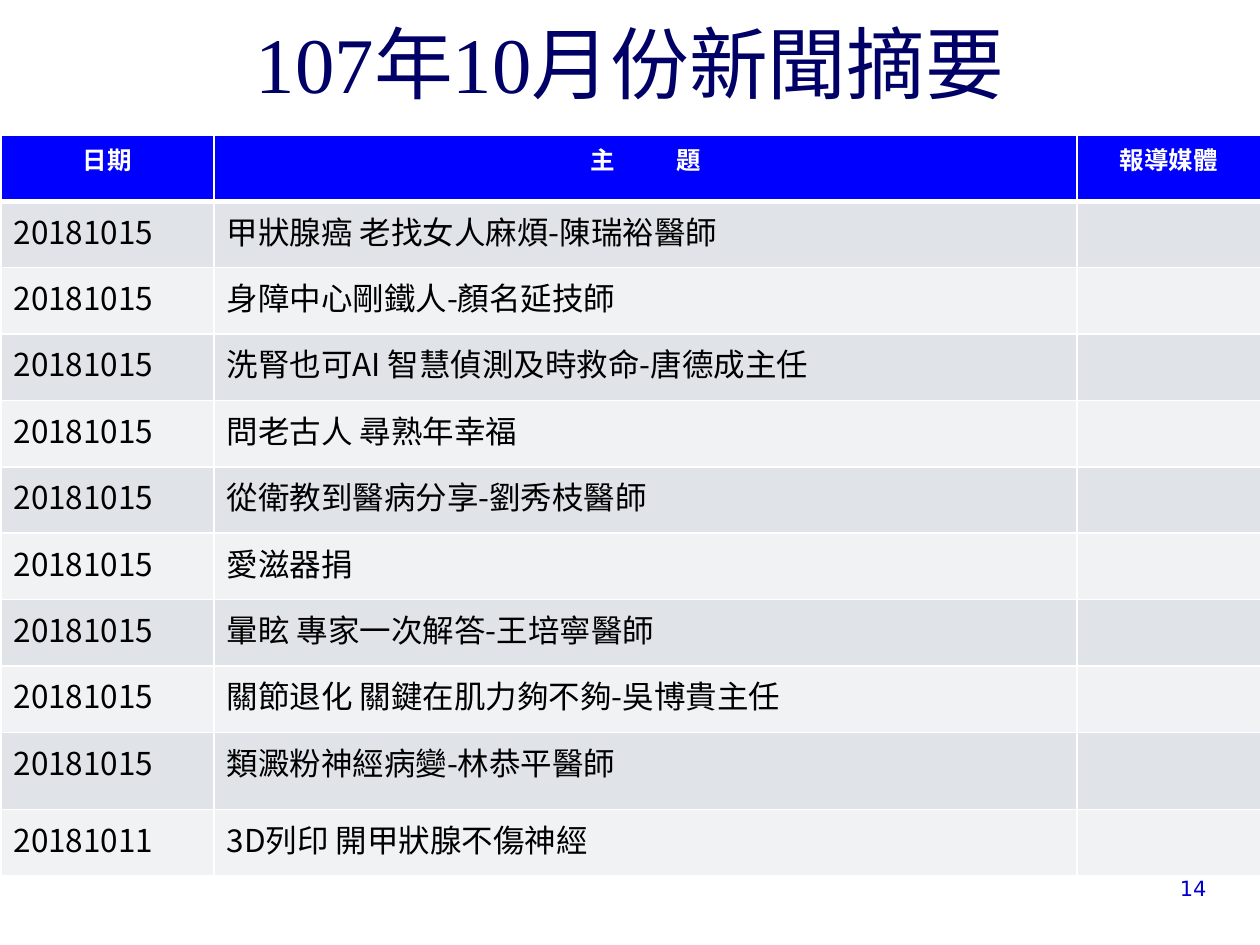
from lxml import etree
from pptx import Presentation
from pptx import util as u
from pptx.dml.color import RGBColor
from pptx.enum import text
from pptx.oxml.ns import qn

PX = 914400 // 126  # one px in EMU
CJK, SERIF, SANS = "Noto Sans CJK SC", "Times New Roman", "DejaVu Sans"
COLORS = {"title": "000066", "header": "0000FF", "white": "FFFFFF",
          "body": "000000", "odd": "E0E4E9", "even": "F0F2F4",
          "number": "0000CC"}

HEADERS = ["日期", "主 題", "報導媒體"]
HEADER_GAP = 3200  # extra width of the gap in a header, 1/100 pt
NEWS = [
    ("20181015", "甲狀腺癌 老找女人麻煩-陳瑞裕醫師"),
    ("20181015", "身障中心剛鐵人-顏名延技師"),
    ("20181015", "洗腎也可AI 智慧偵測及時救命-唐德成主任"),
    ("20181015", "問老古人 尋熟年幸福"),
    ("20181015", "從衛教到醫病分享-劉秀枝醫師"),
    ("20181015", "愛滋器捐"),
    ("20181015", "暈眩 專家一次解答-王培寧醫師"),
    ("20181015", "關節退化 關鍵在肌力夠不夠-吳博貴主任"),
    ("20181015", "類澱粉神經病變-林恭平醫師"),
    ("20181011", "3D列印 開甲狀腺不傷神經"),
]
COLUMNS = [213, 863, 184]
TALL_ROW, TALL_HEIGHT = 9, 77


def emu(box):
    return [v * PX for v in box]


def rgb(name):
    return RGBColor.from_string(COLORS[name])


def style_run(r, size, color, font, bold=False):
    r.font.size = u.Pt(size)
    r.font.bold = bold
    r.font.color.rgb = rgb(color)
    r.font.name = font
    ea = etree.SubElement(r.font._element, qn("a:ea"))
    ea.set("typeface", CJK)


def style_paragraph(p, align, *style):
    p.alignment = align
    for r in p.runs:
        style_run(r, *style)


def set_borders(cell, top, bottom):
    """White borders, widths in points, placed before the cell fill."""
    tc_pr = cell._tc.get_or_add_tcPr()
    widths = {"lnL": 1, "lnR": 1, "lnT": top, "lnB": bottom}
    for i, (side, width) in enumerate(widths.items()):
        ln = etree.Element(qn("a:" + side), w=str(u.Pt(width)))
        fill = etree.SubElement(ln, qn("a:solidFill"))
        etree.SubElement(fill, qn("a:srgbClr"), val=COLORS["white"])
        tc_pr.insert(i, ln)


def add_title(s, box):
    sp = s.shapes.title
    sp.left, sp.top, sp.width, sp.height = emu(box)
    tf = sp.text_frame
    tf.text = "107年10月份新聞摘要"
    tf.auto_size = text.MSO_AUTO_SIZE.NONE
    tf.vertical_anchor = text.MSO_ANCHOR.BOTTOM
    style_paragraph(tf.paragraphs[0], text.PP_ALIGN.CENTER, 45, "title", SERIF)


def fill_header(cell, label):
    p = cell.text_frame.paragraphs[0]
    for part in label.partition(" "):
        if part:
            r = p.add_run()
            r.text = part
            if part == " ":
                r.font._element.set("spc", str(HEADER_GAP))
    style_paragraph(p, text.PP_ALIGN.CENTER, 14, "white", CJK, True)


def add_news_table(s, box):
    rows = len(NEWS) + 1
    table = s.shapes.add_table(rows, len(COLUMNS), *emu(box)).table
    for column, width in zip(table.columns, COLUMNS):
        column.width = width * PX
    for i, row in enumerate(table.rows):
        row.height = (box[3] - TALL_HEIGHT) * PX // (rows - 1)
        fill = "header" if i == 0 else "odd" if i % 2 else "even"
        for j, cell in enumerate(row.cells):
            cell.fill.solid()
            cell.fill.fore_color.rgb = rgb(fill)
            set_borders(cell, 3 if i == 1 else 1, 3 if i == 0 else 1)
            if i == 0:
                fill_header(cell, HEADERS[j])
            elif j < len(NEWS[i - 1]):  # the media column stays empty
                cell.text_frame.text = NEWS[i - 1][j]
                style_paragraph(cell.text_frame.paragraphs[0],
                                text.PP_ALIGN.LEFT, 18, "body", CJK)
    table.rows[TALL_ROW].height = TALL_HEIGHT * PX


def add_page_number(s, box):
    tf = s.shapes.add_textbox(*emu(box)).text_frame
    tf.word_wrap = True
    tf.text = "14"
    style_paragraph(tf.paragraphs[0], text.PP_ALIGN.RIGHT, 12, "number", SANS)


def main():
    prs = Presentation()
    prs.slide_width, prs.slide_height = u.Inches(10), u.Inches(7.5)
    s = prs.slides.add_slide(prs.slide_layouts[5])  # title only
    add_title(s, (79, 43, 1102, 73))
    add_news_table(s, (1, 135, sum(COLUMNS), 741))
    add_page_number(s, (1126, 869, 93, 38))
    prs.save("out.pptx")


if __name__ == "__main__":
    main()
